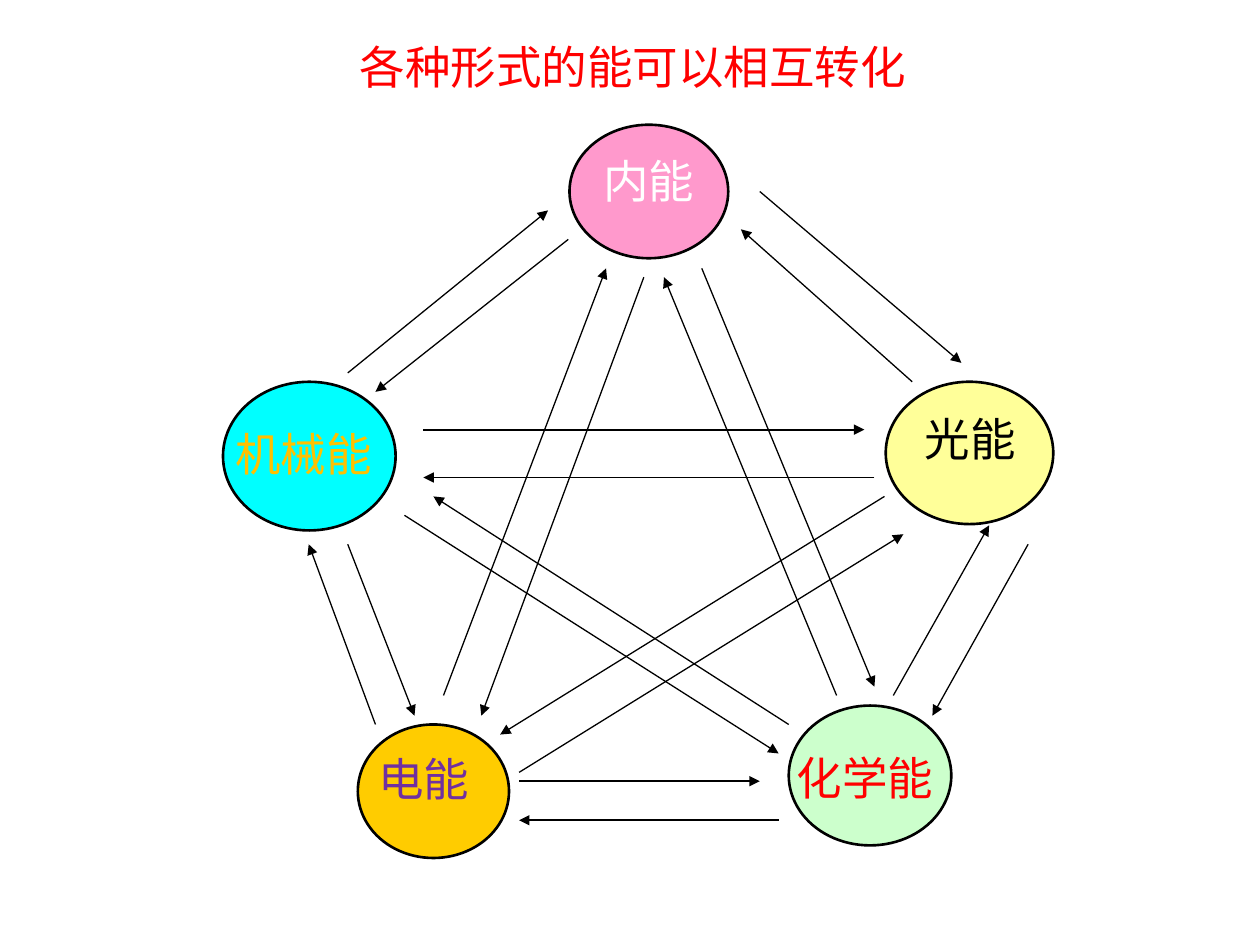
from lxml.etree import SubElement
from pptx import Presentation
from pptx.dml.color import RGBColor
from pptx.enum.shapes import MSO_CONNECTOR, MSO_SHAPE
from pptx.enum.text import MSO_ANCHOR, PP_ALIGN
from pptx.oxml.ns import qn
from pptx.util import Inches, Pt

BLACK = RGBColor(0x00, 0x00, 0x00)
WHITE = RGBColor(0xFF, 0xFF, 0xFF)
RED = RGBColor(0xFF, 0x00, 0x00)
PINK = RGBColor(0xFF, 0x99, 0xCC)
YELLOW = RGBColor(0xFF, 0xFF, 0x99)
AMBER = RGBColor(0xFF, 0xCC, 0x00)
ORANGE = RGBColor(0xFF, 0xC0, 0x00)
CYAN = RGBColor(0x00, 0xFF, 0xFF)
MINT = RGBColor(0xCC, 0xFF, 0xCC)
PURPLE = RGBColor(0x70, 0x30, 0xA0)

CJK_FONT = "Noto Sans CJK SC"
LABEL_HEIGHT = 0.54

# Content: the title, the forms of energy and the conversions between them
TITLE = "各种形式的能可以相互转化"

# name, name colour, fill, ellipse box, label (left, top, width)
ENERGIES = [
    ("光能 ", BLACK, YELLOW, (7.03, 3.03, 1.33, 1.13), (6.94, 3.21, 1.6)),
    ("内能", WHITE, PINK, (4.52, 0.99, 1.26, 1.06), (4.35, 1.16, 1.6)),
    ("电能 ", PURPLE, AMBER, (2.84, 5.75, 1.2, 1.06), (2.68, 5.91, 1.45)),
    ("机械能 ", ORANGE, CYAN, (1.77, 3.03, 1.37, 1.18), (1.46, 3.33, 1.98)),
    ("化学能 ", RED, MINT, (6.26, 5.6, 1.29, 1.11), (5.88, 5.9, 2.05)),
]

# Each pair of energies: the arrow there and the arrow back, as (start, end, weight)
CONVERSIONS = {
    "机械能 - 光能": [((3.36, 3.41), (6.86, 3.41), 1),
                  ((6.94, 3.79), (3.36, 3.79), 0.75)],
    "机械能 - 化学能": [((3.21, 4.09), (6.18, 5.98), 0.75),
                   ((6.26, 5.75), (3.44, 3.94), 0.75)],
    "光能 - 电能": [((7.02, 3.94), (3.97, 5.83), 0.75),
                 ((4.12, 6.13), (7.17, 4.24), 0.75)],
    "电能 - 内能": [((3.52, 5.52), (4.81, 2.13), 0.75),
                 ((5.11, 2.2), (3.82, 5.68), 0.75)],
    "内能 - 化学能": [((5.57, 2.13), (6.94, 5.45), 0.75),
                  ((6.64, 5.52), (5.27, 2.2), 0.75)],
    "机械能 - 内能": [((2.76, 2.96), (4.35, 1.67), 0.75),
                  ((4.51, 1.9), (2.98, 3.11), 0.75)],
    "内能 - 光能": [((6.03, 1.52), (7.63, 2.88), 0.75),
                 ((7.24, 3.03), (5.88, 1.82), 0.75)],
    "光能 - 化学能": [((8.16, 4.32), (7.4, 5.68), 0.75),
                  ((7.09, 5.52), (7.85, 4.17), 0.75)],
    "电能 - 机械能": [((2.98, 5.75), (2.45, 4.32), 0.75),
                  ((2.76, 4.32), (3.29, 5.68), 0.75)],
    "化学能 - 电能": [((6.18, 6.51), (4.12, 6.51), 1),
                  ((4.12, 6.2), (6.03, 6.2), 1)],
}


def write_text(holder, text, *, color, font=CJK_FONT, size=26):
    frame = holder.text_frame
    frame.word_wrap = True
    frame.vertical_anchor = MSO_ANCHOR.MIDDLE
    frame.margin_left = frame.margin_right = Inches(0.1)
    frame.margin_top = frame.margin_bottom = 0
    paragraph = frame.paragraphs[0]
    paragraph.alignment = PP_ALIGN.CENTER
    run = paragraph.add_run()
    run.text = text
    run.font.size = Pt(size)
    run.font.color.rgb = color
    run.font.name = font
    # East Asian typeface, which python-pptx does not set
    SubElement(run.font._element, qn("a:ea"), typeface=CJK_FONT)


def add_energy(slide, name, name_color, fill, ellipse_box, label_box):
    ellipse = slide.shapes.add_shape(MSO_SHAPE.OVAL, *map(Inches, ellipse_box))
    ellipse.shadow.inherit = False
    ellipse.fill.solid()
    ellipse.fill.fore_color.rgb = fill
    ellipse.line.color.rgb = BLACK
    ellipse.line.width = Pt(1.5)
    label = slide.shapes.add_textbox(*map(Inches, (*label_box, LABEL_HEIGHT)))
    write_text(label, name, color=name_color)


def add_arrow(slide, start, end, weight):
    arrow = slide.shapes.add_connector(
        MSO_CONNECTOR.STRAIGHT, *map(Inches, (*start, *end)))
    arrow.line.color.rgb = BLACK
    arrow.line.width = Pt(weight)
    SubElement(arrow.line._get_or_add_ln(), qn("a:tailEnd"), type="triangle")
    SubElement(arrow._element.spPr, qn("a:effectLst"))


def main():
    prs = Presentation()
    prs.slide_width, prs.slide_height = Inches(10), Inches(7.5)
    slide = prs.slides.add_slide(prs.slide_layouts[5])

    # Title
    title = slide.shapes.title
    title.left, title.top = Inches(2.73), Inches(0.26)
    title.width, title.height = Inches(4.59), Inches(LABEL_HEIGHT)
    write_text(title, TITLE, color=RED, font="Calibri")

    # Forms of energy
    for energy in ENERGIES:
        add_energy(slide, *energy)

    # Conversions
    for arrows in CONVERSIONS.values():
        for start, end, weight in arrows:
            add_arrow(slide, start, end, weight)

    prs.save("out.pptx")


if __name__ == "__main__":
    main()
